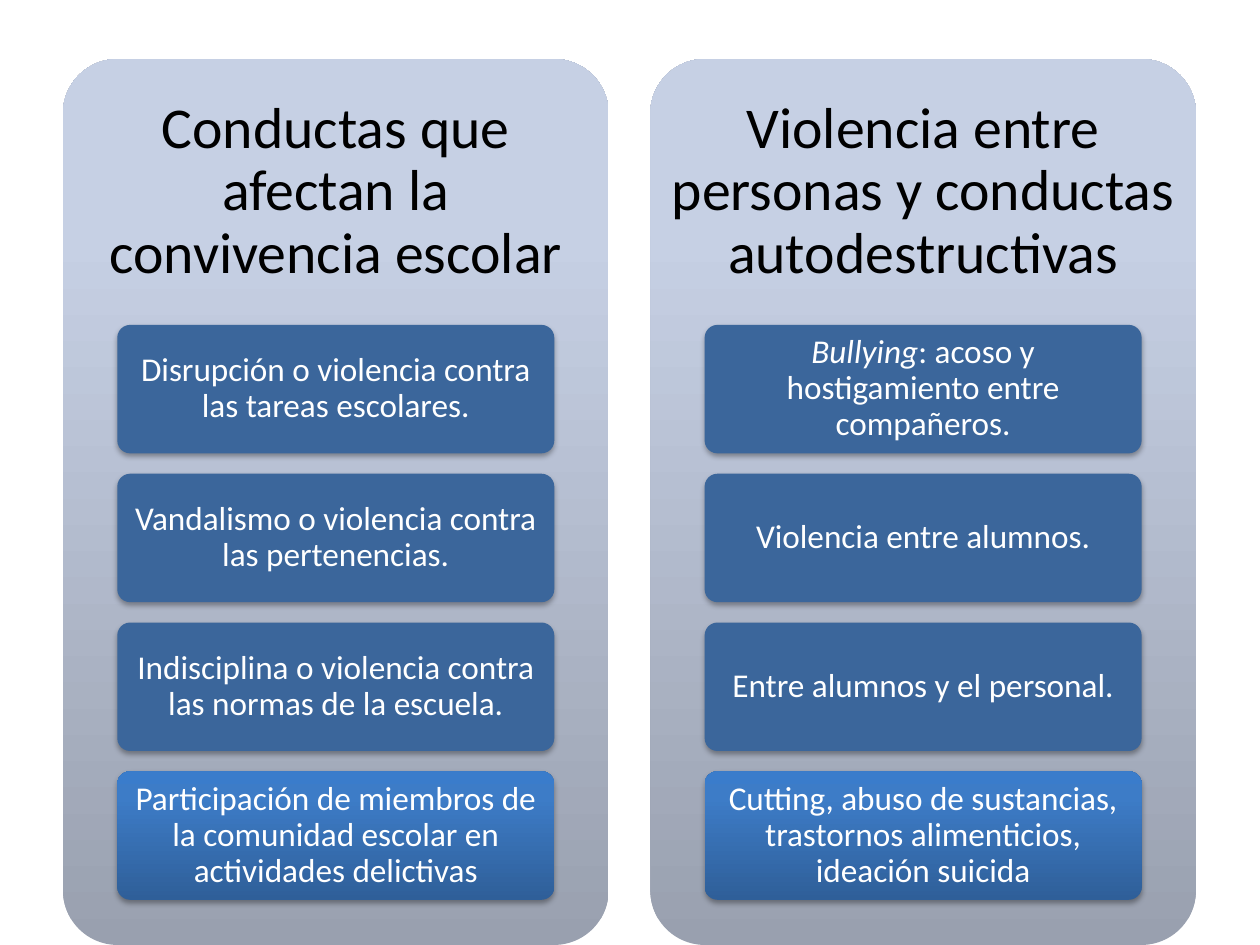
from copy import deepcopy

from lxml import etree
from pptx import Presentation
from pptx import util as u
from pptx.dml.color import RGBColor
from pptx.enum import shapes, text
from pptx.oxml.ns import qn

BLACK = RGBColor(0x00, 0x00, 0x00)
WHITE = RGBColor(0xFF, 0xFF, 0xFF)
CARD_BLUE = RGBColor(0x3B, 0x66, 0x9B)
PANEL_STOPS = [
    (0, RGBColor(0x99, 0xA0, 0xAF)),
    (0.8, RGBColor(0xC6, 0xD0, 0xE4)),
    (1, RGBColor(0xC7, 0xD1, 0xE5)),
]
CARD_STOPS = [
    (0, RGBColor(0x2F, 0x5F, 0x99)),
    (0.8, RGBColor(0x3D, 0x7C, 0xC7)),
    (1, RGBColor(0x3A, 0x7C, 0xCB)),
]

PANEL_LEFT, PANEL_TOP = u.Cm(1.27), u.Cm(1.19)
PANEL_W, PANEL_H, PANEL_PITCH = u.Cm(11), u.Cm(17.86), u.Cm(11.84)
HEADING_H = u.Cm(5.36)
CARD_W, CARD_H, CARD_PITCH = u.Cm(8.81), u.Cm(2.59), u.Cm(3)

COLUMNS = [
    ("Conductas que afectan la convivencia escolar", [
        [("Disrupción o violencia contra las tareas escolares.", False)],
        [("Vandalismo o violencia contra las pertenencias.", False)],
        [("Indisciplina o violencia contra las normas de la escuela.", False)],
        [("Participación de miembros de la comunidad escolar en "
          "actividades delictivas", False)],
    ]),
    ("Violencia entre personas y conductas autodestructivas", [
        [("Bullying", True),
         (": acoso y hostigamiento entre compañeros.", False)],
        [("Violencia entre alumnos.", False)],
        [("Entre alumnos y el personal.", False)],
        [("Cutting, abuso de sustancias, trastornos alimenticios, "
          "ideación suicida", False)],
    ]),
]


def set_gradient(sp, stops):
    sp.fill.gradient()
    sp.fill.gradient_angle = 90
    gs_list = sp._element.spPr.find(".//" + qn("a:gsLst"))
    gs_list.append(deepcopy(gs_list[-1]))
    for stop, (position, color) in zip(sp.fill.gradient_stops, stops):
        stop.position = position
        stop.color.rgb = color


def add_shadow(sp):
    effects = sp._element.spPr.find(qn("a:effectLst"))
    shadow = etree.SubElement(effects, qn("a:outerShdw"), blurRad="40000",
                              dist="23000", dir="5400000", rotWithShape="0")
    color = etree.SubElement(shadow, qn("a:srgbClr"), val="000000")
    etree.SubElement(color, qn("a:alpha"), val="35000")


def add_round_rect(s, left, top, width, height):
    sp = s.shapes.add_shape(shapes.MSO_SHAPE.ROUNDED_RECTANGLE,
                            left, top, width, height)
    sp.adjustments[0] = 0.1
    sp.shadow.inherit = False
    sp.line.fill.background()
    return sp


def write_text(sp, pieces, size, color, inset_x, inset_y):
    tf = sp.text_frame
    tf.word_wrap = True
    tf.vertical_anchor = text.MSO_ANCHOR.MIDDLE
    tf.margin_left = tf.margin_right = inset_x
    tf.margin_top = tf.margin_bottom = inset_y
    p = tf.paragraphs[0]
    p.alignment = text.PP_ALIGN.CENTER
    p.line_spacing = 0.9
    for words, italic in pieces:
        r = p.add_run()
        r.text = words
        r.font.name = "Calibri"
        r.font.size = u.Pt(size)
        r.font.italic = italic
        r.font.color.rgb = color


def add_card(s, left, top, pieces, highlighted):
    sp = add_round_rect(s, left, top, CARD_W, CARD_H)
    if highlighted:
        set_gradient(sp, CARD_STOPS)
    else:
        sp.fill.solid()
        sp.fill.fore_color.rgb = CARD_BLUE
    add_shadow(sp)
    write_text(sp, pieces, 19, WHITE, u.Cm(0.2), u.Cm(0.18))


def add_column(s, left, heading, cards):
    panel = add_round_rect(s, left, PANEL_TOP, PANEL_W, PANEL_H)
    set_gradient(panel, PANEL_STOPS)
    box = s.shapes.add_textbox(left, PANEL_TOP, PANEL_W, HEADING_H)
    write_text(box, [(heading, False)], 33, BLACK, u.Cm(0.35), u.Cm(0.35))
    card_left = left + (PANEL_W - CARD_W) // 2
    for i, pieces in enumerate(cards):
        top = PANEL_TOP + HEADING_H + i * CARD_PITCH
        add_card(s, card_left, top, pieces, i == len(cards) - 1)


def main():
    prs = Presentation()
    prs.slide_width, prs.slide_height = u.Cm(25.4), u.Cm(19.05)
    s = prs.slides.add_slide(prs.slide_layouts[6])
    for i, (heading, cards) in enumerate(COLUMNS):
        add_column(s, PANEL_LEFT + i * PANEL_PITCH, heading, cards)
    prs.save("out.pptx")


if __name__ == "__main__":
    main()
